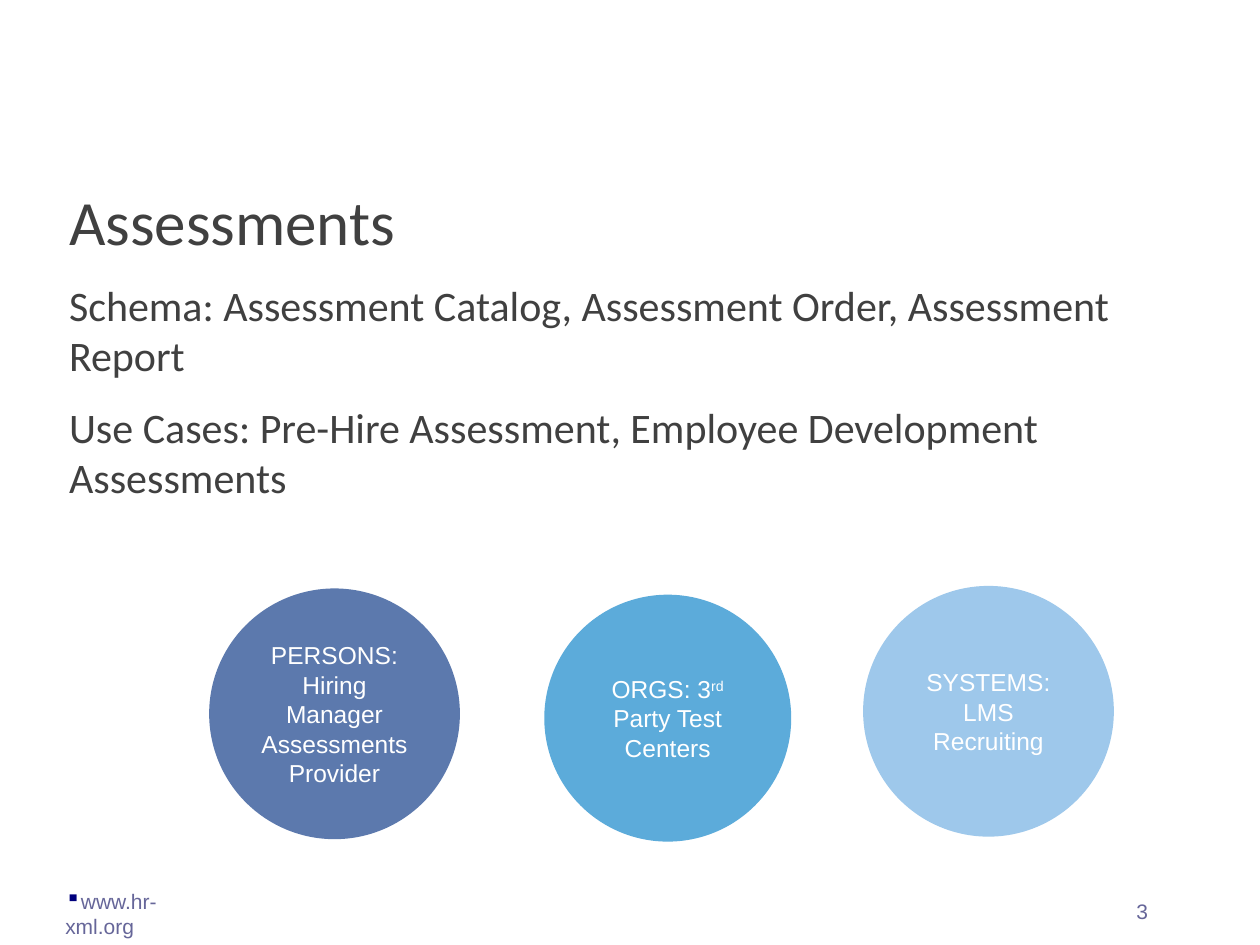
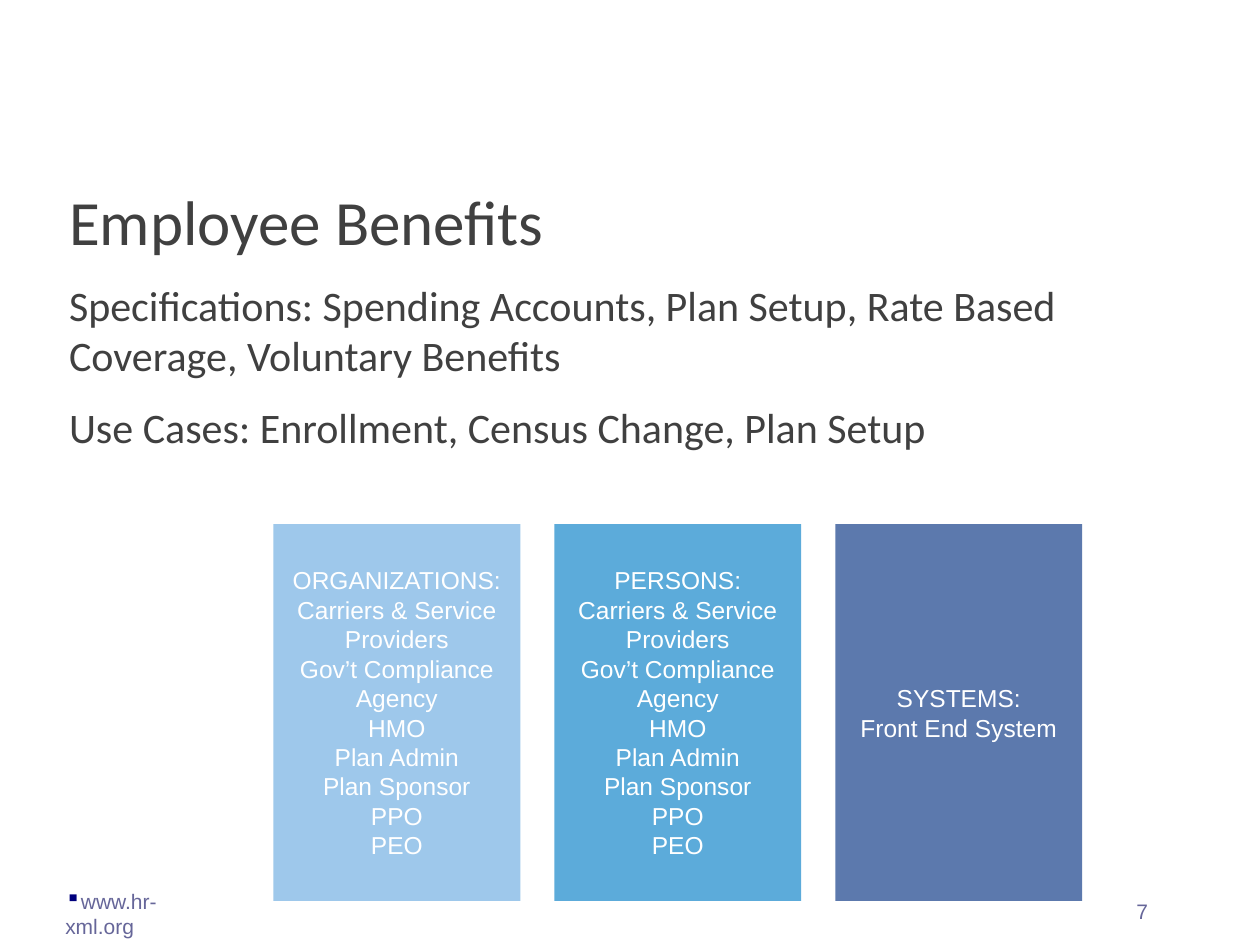
from dataclasses import dataclass

from lxml import etree
from pptx import Presentation
from pptx.dml.color import RGBColor
from pptx.enum.shapes import MSO_SHAPE
from pptx.enum.text import MSO_ANCHOR, PP_ALIGN
from pptx.oxml.ns import qn
from pptx.util import Inches, Pt

OVAL = MSO_SHAPE.OVAL
RECTANGLE = MSO_SHAPE.RECTANGLE
LEFT, CENTER = PP_ALIGN.LEFT, PP_ALIGN.CENTER
TOP, MIDDLE = MSO_ANCHOR.TOP, MSO_ANCHOR.MIDDLE


@dataclass(frozen=True)
class Theme:
    body_font: str = "Calibri"
    label_font: str = "Arial"
    ink: str = "404040"
    footer: str = "666699"
    bullet: str = "00007D"
    white: str = "FFFFFF"
    pale: str = "9EC8EB"
    sky: str = "5CABDA"
    slate: str = "5C79AD"
    title_size: int = 36
    body_size: int = 24
    label_size: int = 14
    footer_size: int = 12
    paragraph_gap: int = 6


class SlideBuilder:
    def __init__(self, deck, theme):
        self.deck = deck
        self.theme = theme
        self.page = None

    def new_page(self, number):
        self.page = self.deck.slides.add_slide(self.deck.slide_layouts[6])
        self.footer(number)

    def style(self, para, font, size, color, align=LEFT):
        para.alignment = align
        para.font.name = font
        para.font.size = Pt(size)
        para.font.color.rgb = RGBColor.from_string(color)

    def text_box(self, left, top, width, height, lines, inset=0.05):
        box = self.page.shapes.add_textbox(
            Inches(left), Inches(top), Inches(width), Inches(height))
        frame = box.text_frame
        frame.word_wrap = True
        frame.vertical_anchor = TOP
        frame.margin_top = frame.margin_bottom = Inches(inset)
        frame.text = "\n".join(lines)
        return frame.paragraphs

    def footer(self, number):
        theme = self.theme
        address = self.text_box(0.42, 7, 1.43, 0.3, ["www.hr-xml.org"])[0]
        self.add_bullet(address)
        page_number = self.text_box(8.92, 7.08, 0.67, 0.3, [str(number)])[0]
        for para in (address, page_number):
            self.style(para, theme.label_font, theme.footer_size, theme.footer)

    def add_bullet(self, para):
        properties = para._p.get_or_add_pPr()
        color = etree.SubElement(properties, qn("a:buClr"))
        etree.SubElement(color, qn("a:srgbClr"), val=self.theme.bullet)
        etree.SubElement(properties, qn("a:buChar"), char="▪")

    def body(self, title, *lines):
        theme = self.theme
        paras = self.text_box(0.45, 1.35, 9.2, 5.3, [title, *lines], inset=0.1)
        for index, para in enumerate(paras):
            if index:
                para.space_before = Pt(theme.paragraph_gap)
            para.space_after = Pt(theme.paragraph_gap)
            size = theme.body_size if index else theme.title_size
            self.style(para, theme.body_font, size, theme.ink)

    def labelled_shape(self, kind, left, top, width, height, fill, lines):
        """Draw a filled shape; text between ^ marks is superscript."""
        theme = self.theme
        shape = self.page.shapes.add_shape(
            kind, Inches(left), Inches(top), Inches(width), Inches(height))
        shape.shadow.inherit = False
        shape.fill.solid()
        shape.fill.fore_color.rgb = RGBColor.from_string(fill)
        shape.line.fill.background()
        frame = shape.text_frame
        frame.word_wrap = True
        frame.vertical_anchor = MIDDLE
        for index, line in enumerate(lines):
            para = frame.add_paragraph() if index else frame.paragraphs[0]
            self.style(para, theme.label_font, theme.label_size, theme.white, CENTER)
            for position, text in enumerate(line.split("^")):
                span = para.add_run()
                span.text = text
                if position % 2:
                    span._r.get_or_add_rPr().set("baseline", "30000")


def build_assessments(builder):
    theme = builder.theme
    builder.new_page(3)
    builder.body(
        "Assessments",
        "Schema: Assessment Catalog, Assessment Order, Assessment Report",
        "Use Cases: Pre-Hire Assessment, Employee Development Assessments")

    # Participant circles: left, top, diameter, fill, text
    circles = [
        (6.85, 4.65, 1.99, theme.pale, ["SYSTEMS: LMS Recruiting"]),
        (1.66, 4.67, 1.99, theme.slate,
         ["PERSONS:", "Hiring Manager Assessments Provider"]),
        (4.32, 4.72, 1.96, theme.sky, ["ORGS: 3^rd^ Party Test Centers"]),
    ]
    for left, top, diameter, fill, lines in circles:
        builder.labelled_shape(OVAL, left, top, diameter, diameter, fill, lines)


def build_benefits(builder):
    theme = builder.theme
    builder.new_page(7)
    builder.body(
        "Employee Benefits",
        "Specifications: Spending Accounts, Plan Setup, Rate Based Coverage, "
        "Voluntary Benefits",
        "Use Cases: Enrollment, Census Change, Plan Setup")

    # Participant columns, evenly spaced
    parties = ["Carriers & Service Providers", "Gov’t Compliance Agency", "HMO",
               "Plan Admin", "Plan Sponsor", "PPO", "PEO"]
    columns = [
        (theme.pale, ["ORGANIZATIONS:", *parties]),
        (theme.sky, ["PERSONS:", *parties]),
        (theme.slate, ["SYSTEMS:", "Front End System"]),
    ]
    first_left, column_pitch = 2.17, 2.23
    for index, (fill, lines) in enumerate(columns):
        left = first_left + index * column_pitch
        builder.labelled_shape(RECTANGLE, left, 4.16, 1.96, 2.99, fill, lines)


def main():
    deck = Presentation()
    deck.slide_width, deck.slide_height = Inches(10), Inches(7.5)
    builder = SlideBuilder(deck, Theme())
    build_assessments(builder)
    build_benefits(builder)
    deck.save("out.pptx")


if __name__ == "__main__":
    main()
